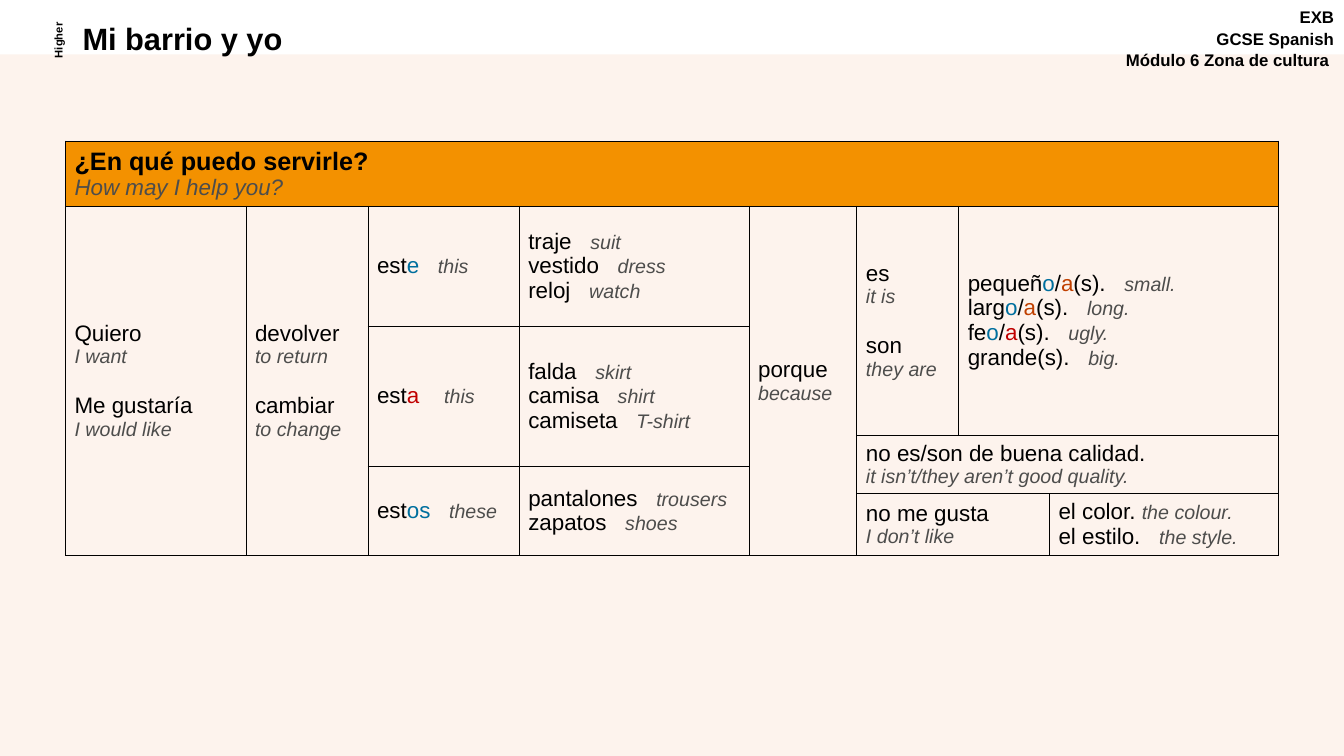
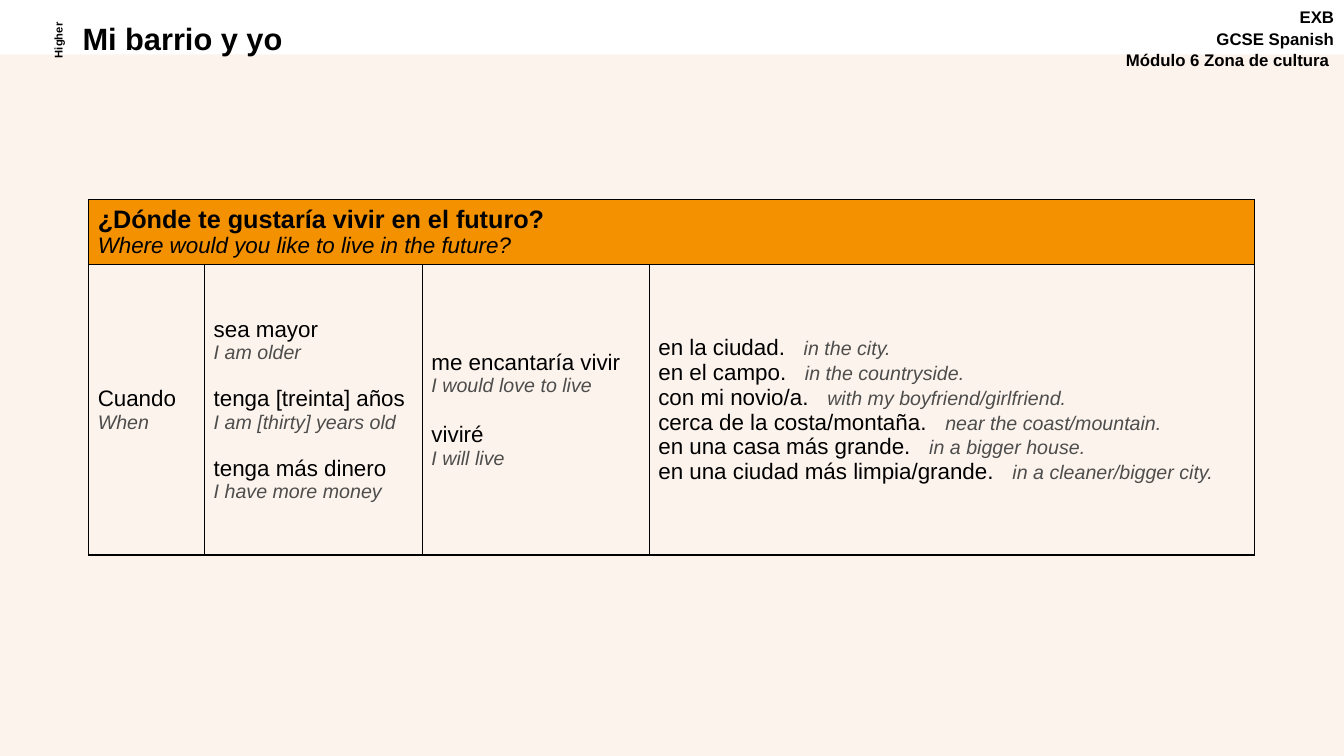
import pptx
import pptx.dml.color
import pptx.enum.shapes
import pptx.enum.text
import pptx.oxml
import pptx.oxml.ns
import pptx.util
from pptx.util import Inches

BLACK, GREY, BLUE, RED, RUST = "000000", "4D4D4C", "006F9E", "C00000", "C04000"
CREAM, ORANGE = "FDF3ED", "F39100"
SPACE_WIDTH = 4.45  # points, one space at the Spanish text size
ALIGN = pptx.enum.text.PP_ALIGN


def rgb(value):
    return pptx.dml.color.RGBColor.from_string(value)


def add_span(para, text, size=16, color=BLACK, bold=False, italic=False, tracking=0):
    span = para.add_run()
    span.text = text
    font = span.font
    font.name, font.size = "Arial", pptx.util.Pt(size)
    font.bold, font.italic = bold, italic
    font.color.rgb = rgb(color)
    if tracking:
        span._r.get_or_add_rPr().set("spc", str(round(tracking * 100)))


# Content helpers: a line is its spans plus the space before it
def line(*parts, before=0):
    spans = [part if isinstance(part, tuple) else (part, {}) for part in parts]
    return spans, before


def tint(text, color):
    return text, {"color": color}


def english(text):
    return text, {"size": 14, "color": GREY, "italic": True}


def gap(spaces=3):
    return " ", {"tracking": SPACE_WIDTH * (spaces - 1)}


def pair(spanish, translation, spaces=3):
    """Spanish and English side by side."""
    return line(spanish, gap(spaces), english(translation))


def stack(*phrases, before=18.4):
    """Spanish above English, with a gap between phrases."""
    lines = []
    for number, (spanish, translation) in enumerate(phrases):
        lines.append(line(spanish, before=before if number else 0))
        lines.append(line(english(translation)))
    return lines


def heading(question, translation, color=GREY):
    return [line((question, {"size": 18, "bold": True})),
            line((translation, {"color": color, "italic": True}))]


def adjective(stem, feminine_color, translation):
    return line(stem, tint("o", BLUE), "/", tint("a", feminine_color), "(s).",
                gap(), english(translation))


class Lesson:
    def __init__(self):
        self.deck = pptx.Presentation()
        self.deck.slide_width, self.deck.slide_height = Inches(13.33), Inches(7.5)
        self.page = None

    def new_page(self):
        self.page = self.deck.slides.add_slide(self.deck.slide_layouts[6])
        self.band(0, 0.54, 13.33, 6.96)
        self.text(10.99, 0.02, 2.34, 0.77,
                  ["EXB", "GCSE Spanish", "Módulo 6 Zona de cultura "],
                  align=ALIGN.RIGHT, before=0.8, size=12)
        self.text(0.72, 0.19, 6.88, 0.43, ["Mi barrio y yo"], spacing=0.9, size=22)
        self.text(0.18, 0.29, 0.78, 0.22, ["Higher"], align=ALIGN.CENTER,
                  rotation=270, size=8)

    def band(self, left, top, width, height):
        shape = self.page.shapes.add_shape(
            pptx.enum.shapes.MSO_SHAPE.RECTANGLE,
            Inches(left), Inches(top), Inches(width), Inches(height))
        shape.shadow.inherit = False
        shape.fill.solid()
        shape.fill.fore_color.rgb = rgb(CREAM)
        shape.line.fill.background()

    def text(self, left, top, width, height, lines, align=ALIGN.LEFT,
             spacing=1.0, before=0, rotation=0, size=12):
        box = self.page.shapes.add_textbox(
            Inches(left), Inches(top), Inches(width), Inches(height))
        box.rotation = rotation
        box.text_frame.word_wrap = True
        self.fill_frame(box.text_frame,
                        [line((text, {"size": size, "bold": True}),
                              before=before if number else 0)
                         for number, text in enumerate(lines)], align, spacing)

    def fill_frame(self, frame, lines, align=ALIGN.LEFT, spacing=1.0):
        for number, (spans, before) in enumerate(lines):
            para = frame.add_paragraph() if number else frame.paragraphs[0]
            para.alignment, para.line_spacing = align, spacing
            para.space_before = pptx.util.Pt(before)
            for text, style in spans:
                add_span(para, text, **style)

    def border(self, cell, side, width):
        edge = pptx.oxml.parse_xml(
            f'<a:ln{side} {pptx.oxml.ns.nsdecls("a")} w="{pptx.util.Pt(width)}">'
            f'<a:solidFill><a:srgbClr val="{BLACK}"/></a:solidFill></a:ln{side}>')
        cell._tc.get_or_add_tcPr().append(edge)

    def table(self, left, top, columns, rows, cells, heavy=()):
        """cells maps (row, column) to (row span, column span, lines)."""
        table = self.page.shapes.add_table(
            len(rows), len(columns), Inches(left), Inches(top),
            Inches(sum(columns)), Inches(sum(rows))).table
        table.first_row = table.horz_banding = False
        for column, width in zip(table.columns, columns):
            column.width = Inches(width)
        for row, height in zip(table.rows, rows):
            row.height = Inches(height)
        # Borders come before the fill in the cell properties
        for r in range(len(rows)):
            for c in range(len(columns)):
                cell = table.cell(r, c)
                for side in "LRTB":
                    self.border(cell, side, 1 if (r, c, side) in heavy else 0.75)
                if r == 0:
                    cell.fill.solid()
                    cell.fill.fore_color.rgb = rgb(ORANGE)
                else:
                    cell.fill.background()
        for (r, c), (row_span, column_span, lines) in cells.items():
            cell = table.cell(r, c)
            if row_span * column_span > 1:
                cell.merge(table.cell(r + row_span - 1, c + column_span - 1))
            cell.vertical_anchor = pptx.enum.text.MSO_ANCHOR.MIDDLE
            cell.margin_left = cell.margin_right = Inches(0.09)
            cell.margin_top = cell.margin_bottom = Inches(0.04)
            self.fill_frame(cell.text_frame, lines)


def main():
    lesson = Lesson()

    # Shopping
    lesson.new_page()
    lesson.table(
        0.65, 1.4, [1.79, 1.21, 1.5, 2.28, 1.07, 1.01, 0.9, 2.27],
        [0.61, 1.19, 1.08, 0.31, 0.24, 0.58],
        {
            (0, 0): (1, 8, heading("¿En qué puedo servirle?", "How may I help you?")),
            (1, 0): (5, 1, stack(("Quiero", "I want"), ("Me gustaría", "I would like"))),
            (1, 1): (5, 1, stack(("devolver", "to return"), ("cambiar", "to change"))),
            (1, 2): (1, 1, [line("est", tint("e", BLUE), gap(), english("this"))]),
            (1, 3): (1, 1, [pair("traje", "suit"), pair("vestido", "dress"),
                            pair("reloj", "watch")]),
            (1, 4): (5, 1, stack(("porque", "because"))),
            (1, 5): (2, 1, stack(("es", "it is"), ("son", "they are"))),
            (1, 6): (2, 2, [adjective("pequeñ", RUST, "small."),
                            adjective("larg", RUST, "long."),
                            adjective("fe", RED, "ugly."),
                            pair("grande(s).", "big.")]),
            (2, 2): (2, 1, [line("est", tint("a", RED), gap(4), english("this"))]),
            (2, 3): (2, 1, [pair("falda", "skirt"), pair("camisa", "shirt"),
                            pair("camiseta", "T-shirt")]),
            (3, 5): (2, 3, stack(("no es/son de buena calidad.",
                                  "it isn’t/they aren’t good quality."))),
            (4, 2): (2, 1, [line("est", tint("os", BLUE), gap(), english("these"))]),
            (4, 3): (2, 1, [pair("pantalones", "trousers"), pair("zapatos", "shoes")]),
            (5, 5): (1, 2, stack(("no me gusta", "I don’t like"))),
            (5, 7): (1, 1, [pair("el color.", "the colour.", spaces=1),
                            pair("el estilo.", "the style.")]),
        })

    # Where to live
    lesson.new_page()
    lesson.table(
        0.88, 1.98, [1.15, 2.16, 2.25, 6], [0.61, 2.88],
        {
            (0, 0): (1, 4, heading("¿Dónde te gustaría vivir en el futuro?",
                                   "Where would you like to live in the future?", BLACK)),
            (1, 0): (1, 1, stack(("Cuando", "When"))),
            (1, 1): (1, 1, stack(("sea mayor", "I am older"),
                                 ("tenga [treinta] años", "I am [thirty] years old"),
                                 ("tenga más dinero", "I have more money"),
                                 before=16.1)),
            (1, 2): (1, 1, stack(("me encantaría vivir", "I would love to live"),
                                 ("viviré", "I will live"))),
            (1, 3): (1, 1, [
                pair("en la ciudad.", "in the city."),
                pair("en el campo.", "in the countryside."),
                pair("con mi novio/a.", "with my boyfriend/girlfriend."),
                pair("cerca de la costa/montaña.", "near the coast/mountain."),
                pair("en una casa más grande.", "in a bigger house."),
                pair("en una ciudad más limpia/grande.", "in a cleaner/bigger city."),
            ]),
        },
        heavy={(0, 0, "R"), *((1, column, "B") for column in range(4))})

    lesson.deck.save("out.pptx")


if __name__ == "__main__":
    main()
